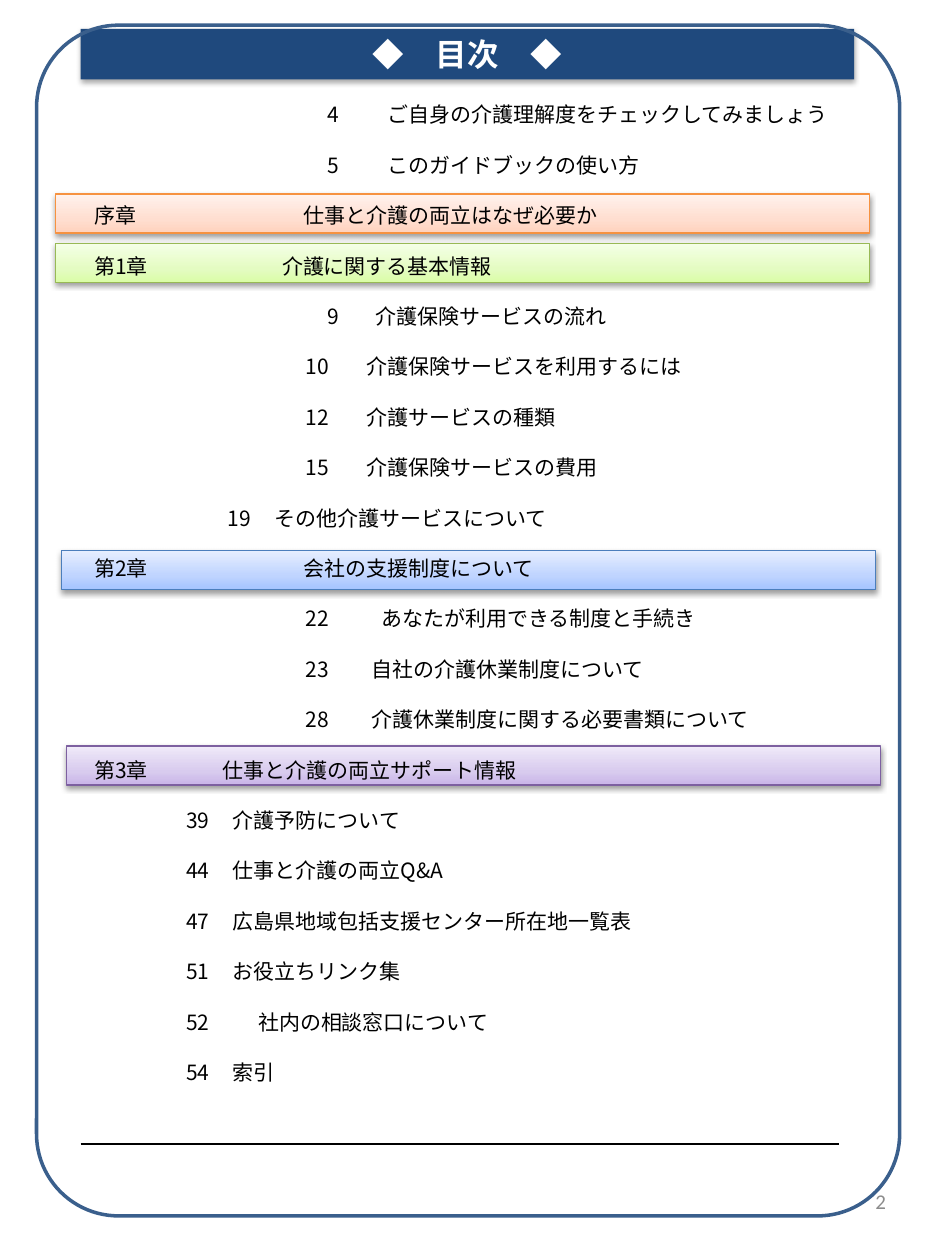
from copy import deepcopy
from dataclasses import dataclass

from lxml.etree import SubElement
from pptx import Presentation
from pptx.dml.color import RGBColor as Rgb
from pptx.enum.shapes import MSO_SHAPE as Shape
from pptx.enum.text import MSO_ANCHOR as Anchor, PP_ALIGN as Align
from pptx.oxml.ns import qn
from pptx.util import Inches, Pt


@dataclass(frozen=True)
class Theme:
    cjk: str = "Noto Sans CJK JP"
    latin: str = "Calibri"
    navy: str = "1F497D"
    frame: str = "3A5F8C"
    black: str = "000000"
    white: str = "FFFFFF"
    grey: str = "8C8C8C"
    title: int = 18
    body: int = 12
    line: float = 14.4


BARS = [
    (0.53, 5.92, "7D60A0", ("C9B5E8", "D8CBEE", "F0EAF9")),
    (0.44, 1.93, "98B955", ("DAFDA7", "E4FCC2", "F5FFE7")),
    (0.49, 4.37, "4B7EBC", ("A4C4FF", "BFD4FF", "E6EEFF")),
    (0.44, 1.54, "F69240", ("FFD2BD", "FFDED0", "FFF2ED")),
]

CONTENTS = [
    ("4", 1.85, "ご自身の介護理解度をチェックしてみましょう", 2.33),
    ("5", 1.85, "このガイドブックの使い方", 2.33),
    ("序章", 0, "仕事と介護の両立はなぜ必要か", 1.66),
    ("第1章", 0, "介護に関する基本情報", 1.49),
    ("9", 1.85, "介護保険サービスの流れ", 2.23),
    ("10", 1.68, "介護保険サービスを利用するには", 2.16),
    ("12", 1.68, "介護サービスの種類", 2.16),
    ("15", 1.68, "介護保険サービスの費用", 2.16),
    ("19", 1.06, "その他介護サービスについて", 1.43),
    ("第2章", 0, "会社の支援制度について", 1.66),
    ("22", 1.68, "あなたが利用できる制度と手続き", 2.28),
    ("23", 1.68, "自社の介護休業制度について", 2.2),
    ("28", 1.68, "介護休業制度に関する必要書類について", 2.2),
    ("第3章", 0, "仕事と介護の両立サポート情報", 1.02),
    ("39", 0.73, "介護予防について", 1.1),
    ("44", 0.73, "仕事と介護の両立Q&A", 1.1),
    ("47", 0.73, "広島県地域包括支援センター所在地一覧表", 1.1),
    ("51", 0.73, "お役立ちリンク集", 1.1),
    ("52", 0.73, "社内の相談窓口について", 1.3),
    ("54", 0.73, "索引", 1.1),
]


class Page:
    def __init__(self, slide, theme):
        self.slide = slide
        self.theme = theme

    def shape(self, kind, *bounds):
        shape = self.slide.shapes.add_shape(kind, *map(Inches, bounds))
        shape.shadow.inherit = False
        shape.fill.background()
        shape.line.fill.background()
        return shape

    def outline(self, shape, color, width):
        shape.line.color.rgb = Rgb.from_string(color)
        shape.line.width = Pt(width)

    def shadow(self, shape, opacity, distance):
        effects = shape._element.spPr.find(qn("a:effectLst"))
        outer = SubElement(
            effects, qn("a:outerShdw"), blurRad=str(Pt(3.1)),
            dist=str(Pt(distance)), dir="5400000", rotWithShape="0")
        color = SubElement(outer, qn("a:srgbClr"), val=self.theme.black)
        SubElement(color, qn("a:alpha"), val=str(opacity * 1000))

    def run(self, para, text, size, color, font, bold=False):
        span = para.add_run()
        span.text = text
        span.font.size = Pt(size)
        span.font.bold = bold
        span.font.name = font
        span.font.color.rgb = Rgb.from_string(color)
        SubElement(span._r.get_or_add_rPr(), qn("a:ea"), typeface=font)

    def bar(self, left, top, edge, colors):
        bar = self.shape(Shape.RECTANGLE, left, top, 6.46, 0.31)
        bar.fill.gradient()
        bar.fill.gradient_angle = 90
        stops = bar._element.spPr.find(qn("a:gradFill")).find(qn("a:gsLst"))
        stops.append(deepcopy(stops[0]))
        for stop, place, color in zip(bar.fill.gradient_stops, (0, 0.35, 1), colors):
            stop.position = place
            stop.color.rgb = Rgb.from_string(color)
        self.outline(bar, edge, 0.75)
        self.shadow(bar, 38, 1.6)

    def banner(self, text):
        banner = self.shape(Shape.RECTANGLE, 0.64, 0.23, 6.14, 0.4)
        banner.fill.solid()
        banner.fill.fore_color.rgb = Rgb.from_string(self.theme.navy)
        self.shadow(banner, 35, 1.8)
        banner.text_frame.vertical_anchor = Anchor.MIDDLE
        para = banner.text_frame.paragraphs[0]
        para.alignment = Align.CENTER
        self.run(para, text, self.theme.title, self.theme.white, self.theme.cjk, True)

    def frame(self):
        frame = self.shape(Shape.ROUNDED_RECTANGLE, 0.29, 0.2, 6.85, 9.45)
        frame.adjustments[0] = 0.095
        self.outline(frame, self.theme.frame, 2)

    def rule_table(self):
        bounds = map(Inches, (0.64, 9.08, 6.02, 0.42))
        table = self.slide.shapes.add_table(1, 1, *bounds).table
        table.first_row = table.horz_banding = False
        cell = table.cell(0, 0)
        cell.fill.background()
        properties = cell._tc.get_or_add_tcPr()
        for index, side in enumerate(("lnL", "lnR", "lnT", "lnB")):
            border = SubElement(properties, qn(f"a:{side}"), w=str(Pt(1)))
            if side == "lnT":
                fill = SubElement(border, qn("a:solidFill"))
                SubElement(fill, qn("a:srgbClr"), val=self.theme.black)
            else:
                SubElement(border, qn("a:noFill"))
            properties.insert(index, border)

    def text_box(self, *bounds):
        box = self.slide.shapes.add_textbox(*map(Inches, bounds))
        box.text_frame.word_wrap = True
        return box.text_frame

    def contents(self, entries):
        text = self.text_box(0.65, 0.76, 6.38, 8.58)
        for index, (label, label_at, title, title_at) in enumerate(entries):
            para = text.add_paragraph() if index else text.paragraphs[0]
            para.line_spacing = para.space_after = Pt(self.theme.line)
            tabs = SubElement(para._p.get_or_add_pPr(), qn("a:tabLst"))
            for place in filter(None, (label_at, title_at)):
                SubElement(tabs, qn("a:tab"), pos=str(Inches(place)), algn="l")
            lead = "\t" if label_at else ""
            for part in (f"{lead}{label}\t", title):
                self.run(para, part, self.theme.body, self.theme.black, self.theme.cjk)

    def page_number(self, number):
        text = self.text_box(5.38, 9.27, 1.75, 0.53)
        text.vertical_anchor = Anchor.MIDDLE
        para = text.paragraphs[0]
        para.alignment = Align.RIGHT
        self.run(para, number, self.theme.body, self.theme.grey, self.theme.latin)


def main():
    """Build the contents page of the care guidebook."""
    deck = Presentation()
    deck.slide_width, deck.slide_height = Inches(7.5), Inches(10)
    page = Page(deck.slides.add_slide(deck.slide_layouts[6]), Theme())
    for bar in BARS:
        page.bar(*bar)
    page.banner("◆　目次　◆")
    page.rule_table()
    page.frame()
    page.contents(CONTENTS)
    page.page_number("2")
    deck.save("out.pptx")


if __name__ == "__main__":
    main()
